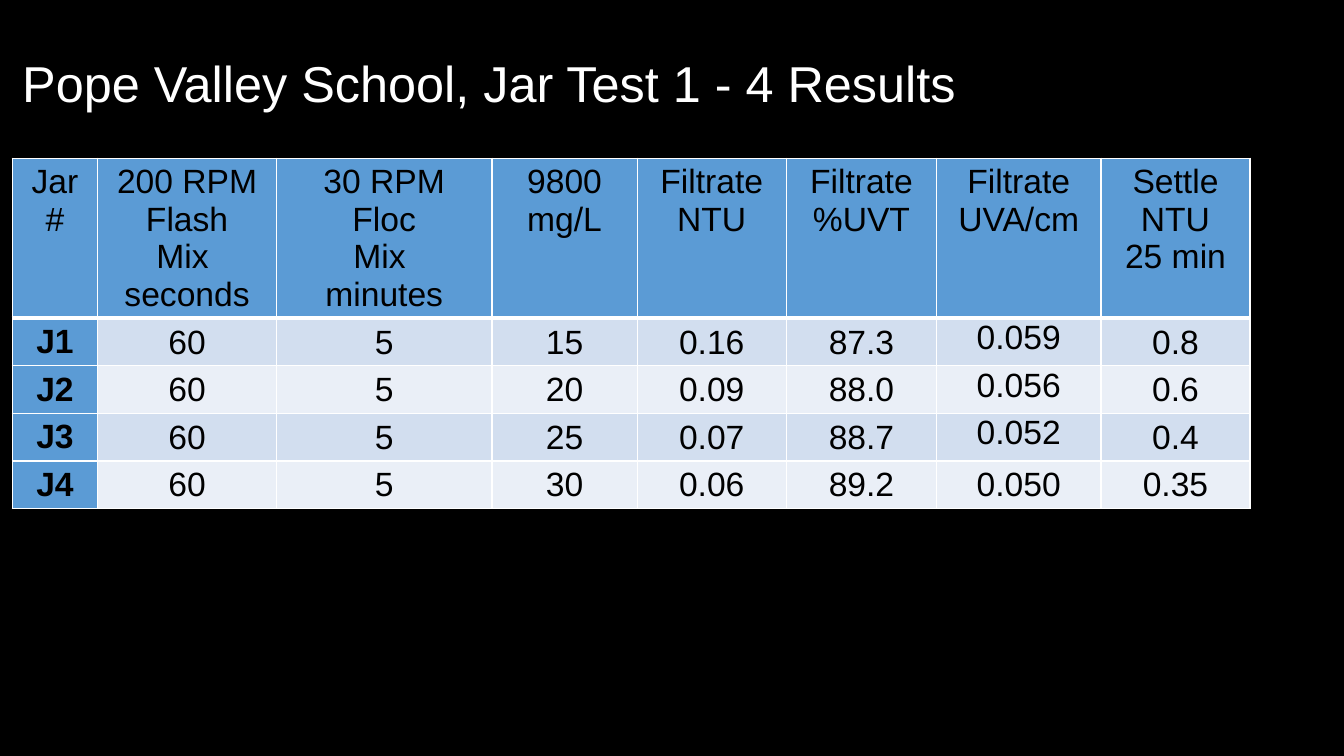
"""Build the jar test results slide."""
import dataclasses

import lxml.etree
import pptx
import pptx.dml.color
import pptx.enum.text
import pptx.oxml.ns
import pptx.presentation
import pptx.slide
import pptx.table
import pptx.util

RGBColor = pptx.dml.color.RGBColor
BLACK = RGBColor(0x00, 0x00, 0x00)
WHITE = RGBColor(0xFF, 0xFF, 0xFF)
HEADING_BLUE = RGBColor(0x5B, 0x9B, 0xD5)
BANDS = (RGBColor(0xD2, 0xDE, 0xEF), RGBColor(0xEA, 0xEF, 0xF7))

FONT = "Arial"
SLIDE_WIDTH = pptx.util.Inches(13.33)
SLIDE_HEIGHT = pptx.util.Inches(7.5)
LEFT = 0.9
TITLE_TOP, TITLE_WIDTH, TITLE_HEIGHT = 1.73, 97.75, 19.33
TABLE_TOP, ROW_HEIGHT = 20.93, 5.47
TITLE = "Pope Valley School, Jar Test 1 - 4 Results"


@dataclasses.dataclass(frozen=True)
class Column:
    """A table column: width in percent of the slide, heading lines and values."""

    width: float
    heading: tuple[str, ...]
    values: tuple[str, ...]


@dataclasses.dataclass(frozen=True)
class CellStyle:
    """The look of one table cell."""

    fill: RGBColor
    bold: bool = False
    compact: bool = False
    middle: bool = False
    bottom_border: float = 1


COLUMNS = (
    Column(6.38, ("Jar\v#",), ("J1", "J2", "J3", "J4")),
    Column(13.28, ("200 RPM", "Flash", "Mix ", "seconds"), ("60",) * 4),
    Column(16.05, ("30 RPM", "Floc", "Mix ", "minutes"), ("5",) * 4),
    Column(10.8, ("9800", "mg/L"), ("15", "20", "25", "30")),
    Column(11.1, ("Filtrate", "NTU"), ("0.16", "0.09", "0.07", "0.06")),
    Column(11.18, ("Filtrate", "%UVT"), ("87.3", "88.0", "88.7", "89.2")),
    Column(12.23, ("Filtrate", "UVA/cm"), ("0.059", "0.056", "0.052", "0.050")),
    Column(11.1, ("Settle", "NTU", "25 min"), ("0.8", "0.6", "0.4", "0.35")),
)
ROW_COUNT = 1 + len(COLUMNS[0].values)
UVA_COLUMN = 6


def across(percent: float) -> pptx.util.Emu:
    """Return a share of the slide width."""
    return pptx.util.Emu(round(SLIDE_WIDTH * percent / 100))


def down(percent: float) -> pptx.util.Emu:
    """Return a share of the slide height."""
    return pptx.util.Emu(round(SLIDE_HEIGHT * percent / 100))


def add_run(paragraph, text: str, size: float, color: RGBColor, bold: bool = False) -> None:
    """Append one formatted run to a paragraph."""
    run = paragraph.add_run()
    run.text = text
    run.font.name = FONT
    run.font.size = pptx.util.Pt(size)
    run.font.color.rgb = color
    run.font.bold = bold


def add_borders(cell, bottom: float) -> None:
    """Draw white lines on the four sides of a cell."""
    properties = cell._tc.get_or_add_tcPr()
    qualified = pptx.oxml.ns.qn
    for side, points in (("L", 1), ("R", 1), ("T", 1), ("B", bottom)):
        line = lxml.etree.SubElement(properties, qualified(f"a:ln{side}"), w=str(pptx.util.Pt(points)))
        fill = lxml.etree.SubElement(line, qualified("a:solidFill"))
        lxml.etree.SubElement(fill, qualified("a:srgbClr"), val=str(WHITE))


def fill_cell(cell, lines: tuple[str, ...], style: CellStyle) -> None:
    """Write centred lines into a cell and style it."""
    add_borders(cell, style.bottom_border)
    cell.fill.solid()
    cell.fill.fore_color.rgb = style.fill
    if style.compact:
        cell.margin_left = cell.margin_right = cell.margin_top = pptx.util.Inches(0.01)
        cell.margin_bottom = 0
    if style.middle:
        cell.vertical_anchor = pptx.enum.text.MSO_ANCHOR.MIDDLE
    for index, line in enumerate(lines):
        frame = cell.text_frame
        paragraph = frame.add_paragraph() if index else frame.paragraphs[0]
        paragraph.alignment = pptx.enum.text.PP_ALIGN.CENTER
        for part_index, part in enumerate(line.split("\v")):
            if part_index:
                paragraph.add_line_break()
            add_run(paragraph, part, 24, BLACK, style.bold)


def value_style(row: int, column: int) -> CellStyle:
    """Choose the style of a cell below the heading row."""
    if column == 0:
        return CellStyle(HEADING_BLUE, bold=True)
    raised = column == UVA_COLUMN and row < ROW_COUNT - 1
    return CellStyle(BANDS[(row - 1) % 2], compact=True, middle=not raised)


def add_title(slide: pptx.slide.Slide) -> None:
    """Place and format the title."""
    title = slide.shapes.title
    title.left, title.top = across(LEFT), down(TITLE_TOP)
    title.width, title.height = across(TITLE_WIDTH), down(TITLE_HEIGHT)
    frame = title.text_frame
    frame.word_wrap = True
    frame.auto_size = pptx.enum.text.MSO_AUTO_SIZE.NONE
    frame.vertical_anchor = pptx.enum.text.MSO_ANCHOR.MIDDLE
    paragraph = frame.paragraphs[0]
    paragraph.alignment = pptx.enum.text.PP_ALIGN.LEFT
    paragraph.line_spacing = 0.9
    add_run(paragraph, TITLE, 36, WHITE)


def add_results(slide: pptx.slide.Slide) -> None:
    """Add the table of jar test results."""
    width = across(sum(column.width for column in COLUMNS))
    table: pptx.table.Table = slide.shapes.add_table(
        ROW_COUNT, len(COLUMNS), across(LEFT), down(TABLE_TOP), width, down(ROW_HEIGHT * ROW_COUNT)
    ).table
    table.first_col = True
    for row in table.rows:
        row.height = down(ROW_HEIGHT)
    for column_index, column in enumerate(COLUMNS):
        table.columns[column_index].width = across(column.width)
        fill_cell(table.cell(0, column_index), column.heading, CellStyle(HEADING_BLUE, bottom_border=3))
        for row_index, value in enumerate(column.values, start=1):
            fill_cell(table.cell(row_index, column_index), (value,), value_style(row_index, column_index))


def main() -> None:
    """Build and save the presentation."""
    presentation: pptx.presentation.Presentation = pptx.Presentation()
    presentation.slide_width, presentation.slide_height = SLIDE_WIDTH, SLIDE_HEIGHT
    slide = presentation.slides.add_slide(presentation.slide_layouts.get_by_name("Title Only"))
    slide.background.fill.solid()
    slide.background.fill.fore_color.rgb = BLACK
    add_title(slide)
    add_results(slide)
    presentation.save("out.pptx")


if __name__ == "__main__":
    main()
